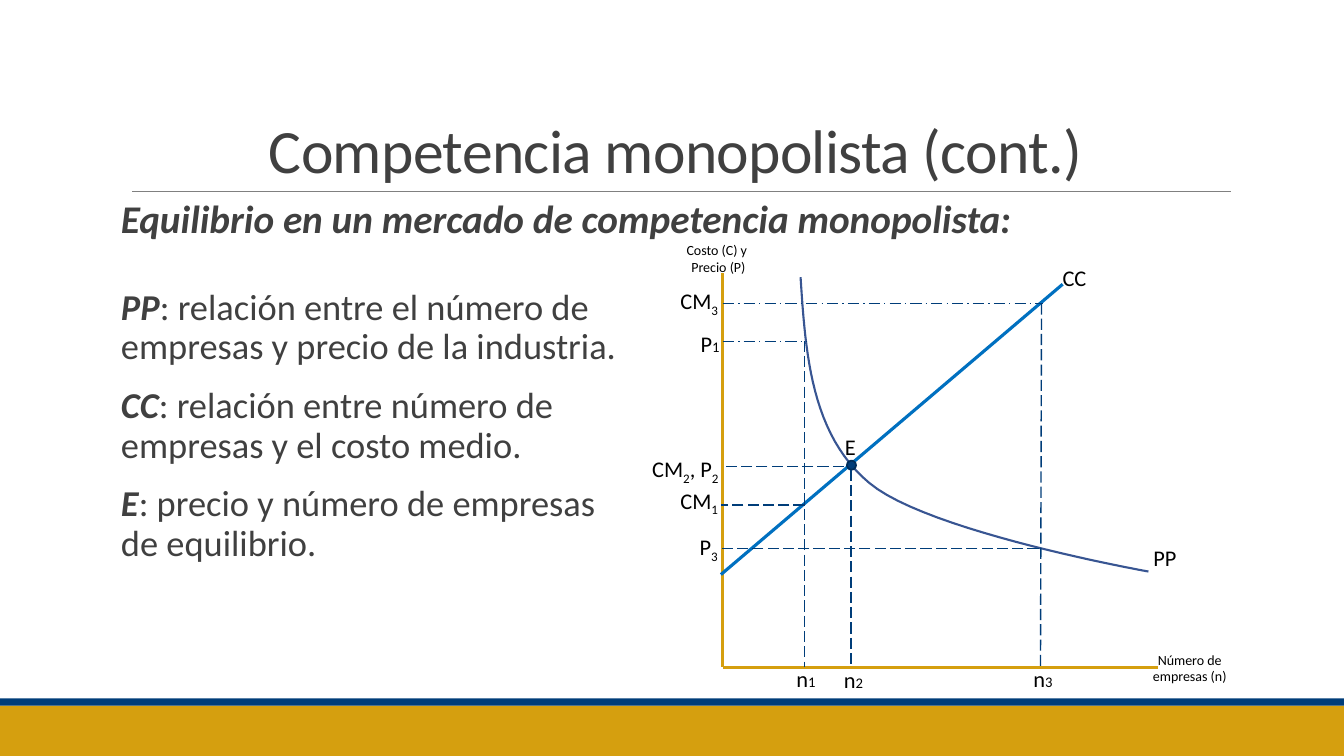
from dataclasses import dataclass
from lxml import etree
from pptx import Presentation
from pptx import util as u
from pptx.dml.color import RGBColor
from pptx.enum import dml, shapes, text
from pptx.oxml.ns import qn

PX = 9144  # 100 px to the inch
LEFT, MID, JUST = (text.PP_ALIGN.LEFT, text.PP_ALIGN.CENTER,
                   text.PP_ALIGN.JUSTIFY)
DASH, DOT = dml.MSO_LINE.LONG_DASH, dml.MSO_LINE.LONG_DASH_DOT


@dataclass(frozen=True)
class Theme:
    font: str = "Calibri"
    ink: str = "404040"
    black: str = "000000"
    gold: str = "D59F0F"
    navy: str = "003D79"
    edge: str = "002D5A"
    blue: str = "0070C0"
    curve: str = "385592"
    gray: str = "808080"
    title: float = 44
    head: float = 28
    body: float = 26
    label: float = 16
    small: float = 10.5
    note: float = 10


T = Theme()
BOLD = {"bold": True, "ital": True}
SUB = {"base": -25}
TINY = {"size": T.small}


def px(n):
    return u.Emu(round(n * PX))


def rgb(code):
    return RGBColor.from_string(code)


def write(para, words, size=T.label, color=T.black, bold=False, ital=False,
          base=0, track=0):
    """Add one formatted run; a newline becomes a line break."""
    for i, part in enumerate(words.split("\n")):
        if i:
            para.add_line_break()
        run = para.add_run()
        run.text = part
        font = run.font
        font.name, font.size = T.font, u.Pt(size)
        font.bold, font.italic = bold, ital
        font.color.rgb = rgb(color)
        if base:
            font._element.set("baseline", str(base * 1000))
        if track:
            font._element.set("spc", str(round(track * 100)))


class Deck:
    def __init__(self):
        self.prs = Presentation()
        self.prs.slide_width, self.prs.slide_height = px(1333), px(750)
        self.slide = self.prs.slides.add_slide(self.prs.slide_layouts[6])
        self.items = self.slide.shapes

    def shape(self, kind, x, y, w, h, fill, line=None, wide=1.25):
        item = self.items.add_shape(kind, px(x), px(y), px(w), px(h))
        item.shadow.inherit = False
        item.fill.solid()
        item.fill.fore_color.rgb = rgb(fill)
        if line:
            item.line.color.rgb = rgb(line)
            item.line.width = u.Pt(wide)
        else:
            item.line.fill.background()

    def line(self, x1, y1, x2, y2, color=T.navy, wide=1, dash=None):
        item = self.items.add_connector(
            shapes.MSO_CONNECTOR.STRAIGHT, px(x1), px(y1), px(x2), px(y2))
        item.line.color.rgb = rgb(color)
        item.line.width = u.Pt(wide)
        if dash:
            item.line.dash_style = dash
        etree.SubElement(item._element.spPr, qn("a:effectLst"))

    def curve(self, start, parts, color, wide, steps=24):
        """Trace cubic arcs, each given as two controls and an end."""
        dots, a = [], start
        for b, c, d in parts:
            for i in range(1, steps + 1):
                t = i / steps
                s = 1 - t
                dots.append(tuple(
                    px(s**3 * p + 3 * s * s * t * q + 3 * s * t * t * r
                       + t**3 * e) for p, q, r, e in zip(a, b, c, d)))
            a = d
        path = self.items.build_freeform(px(start[0]), px(start[1]), scale=1)
        path.add_line_segments(dots, close=False)
        item = path.convert_to_shape()
        item.shadow.inherit = False
        item.fill.background()
        item.line.color.rgb = rgb(color)
        item.line.width = u.Pt(wide)

    def text(self, x, y, w, h, paras, align=LEFT, wrap=True, grow=False,
             side=10, low=False, gap=None, after=2, lead=None, **fmt):
        """Each paragraph is a list of (words, format) runs."""
        box = self.items.add_textbox(px(x), px(y), px(w), px(h))
        frame = box.text_frame
        frame.word_wrap = wrap
        frame.margin_left = frame.margin_right = px(side)
        if grow:
            frame.auto_size = text.MSO_AUTO_SIZE.SHAPE_TO_FIT_TEXT
        if low:
            frame.vertical_anchor = text.MSO_ANCHOR.BOTTOM
        for i, runs in enumerate(paras):
            para = frame.add_paragraph() if i else frame.paragraphs[0]
            para.alignment = align
            if lead:
                para.line_spacing = lead
            if gap:
                para.space_before, para.space_after = u.Pt(gap), u.Pt(after)
            for words, own in runs:
                write(para, words, **{**fmt, **own})


def main():
    deck = Deck()
    rect, oval = shapes.MSO_SHAPE.RECTANGLE, shapes.MSO_SHAPE.OVAL

    # Footer bands and title
    deck.shape(rect, 0, 700, 1333, 50, T.gold)
    deck.shape(rect, 0, 693, 1333, 7, T.navy)
    deck.line(131, 190, 1221, 190, T.gray, 0.5)
    deck.text(120, 31, 1100, 159, [[("Competencia monopolista (cont.)", {})]],
              align=MID, low=True, lead=0.85, size=T.title, color=T.ink,
              track=-0.5)

    # Axes, cost line and price curve
    deck.line(717, 271, 717, 662, T.gold, 2.25)
    deck.line(717, 662, 1149, 662, T.gold, 2.25)
    deck.line(715, 570, 1054, 282, T.blue, 2.25)
    deck.curve((794, 275), [((799, 353), (805, 431), (862, 479)),
                            ((920, 528), (1139, 567), (1139, 567))],
               T.curve, 1.5)
    deck.shape(oval, 840, 457, 9, 9, T.navy, T.edge)

    # Guide lines
    for guide in [(717, 301, 1034, 301, DOT), (1033, 301, 1032, 663, DASH),
                  (717, 339, 800, 339, DOT), (798, 338, 798, 662, DASH),
                  (837, 463, 717, 463, DASH), (1030, 544, 716, 544, DASH),
                  (798, 501, 715, 501, DASH), (844, 466, 844, 661, DASH)]:
        deck.line(*guide[:4], dash=guide[4])

    # Point, curve and axis labels
    for x, y, w, runs in [
            (637, 447, 89, [("CM", {}), ("2", SUB), (", P", {}), ("2", SUB)]),
            (665, 280, 59, [("CM", {}), ("3", SUB)]),
            (665, 478, 59, [("CM", {}), ("1", SUB)]),
            (684, 524, 39, [("P", {}), ("3", SUB)]),
            (685, 323, 39, [("P", {}), ("1", TINY)]),
            (780, 655, 39, [("n", {}), ("1", TINY)]),
            (827, 656, 39, [("n", {}), ("2", TINY)]),
            (1015, 655, 39, [("n", {}), ("3", TINY)]),
            (1044, 257, 44, [("CC", {})]),
            (1134, 535, 50, [("PP", {})]),
            (828, 425, 31, [("E", {})])]:
        deck.text(x, y, w, 37, [runs], wrap=False, grow=True)
    for x, y, w, words in [(660, 235, 105, "Costo (C) y \nPrecio (P)"),
                           (1117, 641, 126, "Número de empresas (n)")]:
        deck.text(x, y, w, 44, [[(words, {})]], align=MID, grow=True,
                  size=T.note)

    # Heading and definitions
    prose = dict(side=0, lead=0.9, gap=12, color=T.ink)
    deck.text(120, 193, 1100, 51,
              [[("Equilibrio en un mercado de competencia monopolista:",
                 BOLD)]], align=JUST, size=T.head, **prose)
    terms = [
        ("PP", "relación entre el número de empresas y precio de la "
               "industria."),
        ("CC", "relación entre número de empresas y el costo medio."),
        ("E", "precio y número de empresas de equilibrio.")]
    deck.text(120, 282, 508, 400,
              [[(term, BOLD), (": " + sense, {})] for term, sense in terms],
              size=T.body, **prose)

    deck.prs.save("out.pptx")


if __name__ == "__main__":
    main()
